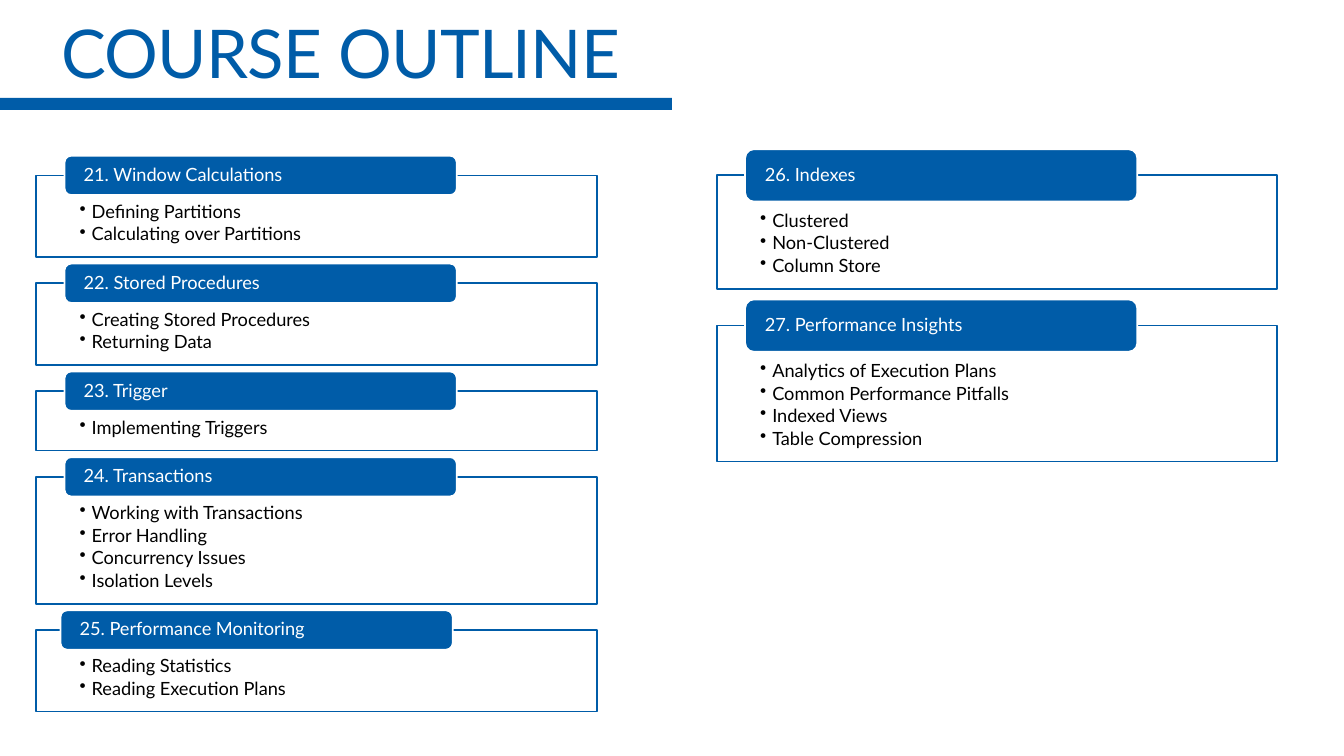
from lxml import etree
from pptx import Presentation
from pptx.dml.color import RGBColor
from pptx.enum.shapes import MSO_SHAPE as SHAPE
from pptx.enum.text import MSO_ANCHOR as ANCHOR, PP_ALIGN as ALIGN
from pptx.oxml.ns import qn
from pptx.util import Inches, Pt

TITLE = "COURSE OUTLINE"
COLUMNS = [
    {"left": 0.36, "tab_h": 0.39, "pad": 0.36, "gap": 0.26, "inset": 0.27, "topics": [
        ("21. Window Calculations", ["Defining Partitions", "Calculating over Partitions"], 0.28),
        ("22. Stored Procedures", ["Creating Stored Procedures", "Returning Data"], 0.28),
        ("23. Trigger", ["Implementing Triggers"], 0.28),
        ("24. Transactions", ["Working with Transactions", "Error Handling",
                              "Concurrency Issues", "Isolation Levels"], 0.28),
        ("25. Performance Monitoring", ["Reading Statistics", "Reading Execution Plans"], 0.24),
    ]},
    {"left": 7.11, "tab_h": 0.52, "pad": 0.45, "gap": 0.36, "inset": 0.36, "topics": [
        ("26. Indexes", ["Clustered", "Non-Clustered", "Column Store"], 0.28),
        ("27. Performance Insights", ["Analytics of Execution Plans", "Common Performance Pitfalls",
                                      "Indexed Views", "Table Compression"], 0.28),
    ]},
]
COLORS = {"blue": "005CA8", "white": "FFFFFF", "black": "000000"}
FONT = "Lato"
WIDTH, HEIGHT = 13.33, 7.5
TOP, BOX_W, TAB_W, LINE_H = 1.74, 5.56, 3.89, 0.23

prs = Presentation()
prs.slide_width, prs.slide_height = Inches(WIDTH), Inches(HEIGHT)
s = prs.slides.add_slide(prs.slide_layouts[6])


def rgb(name):
    return RGBColor.from_string(COLORS[name])


def add_box(kind, place, fill, line=None):
    sp = s.shapes.add_shape(kind, *map(Inches, place))
    sp.shadow.inherit = False
    sp.fill.solid()
    sp.fill.fore_color.rgb = rgb(fill)
    if line:
        sp.line.color.rgb = rgb(line)
        sp.line.width = Pt(1.25)
    else:
        sp.line.fill.background()
    return sp


def set_frame(tf, anchor, margins):
    tf.word_wrap = True
    tf.vertical_anchor = anchor
    for side, size in zip(("left", "top", "right", "bottom"), margins):
        setattr(tf, f"margin_{side}", Inches(size))


def write(tf, lines, size, color, after, bullet=False):
    for i, text in enumerate(lines):
        p = tf.add_paragraph() if i else tf.paragraphs[0]
        for key, value in {"alignment": ALIGN.LEFT, "line_spacing": 0.9,
                           "space_before": Pt(0), "space_after": Pt(after)}.items():
            setattr(p, key, value)
        if bullet:
            p.level = 1
            pPr = p._p.get_or_add_pPr()
            pPr.set("marL", str(Inches(0.12)))
            pPr.set("indent", str(Inches(-0.12)))
            etree.SubElement(pPr, qn("a:buChar")).set("char", "•")
        r = p.add_run()
        r.text = text
        for key, value in {"name": FONT, "size": Pt(size)}.items():
            setattr(r.font, key, value)
        r.font.color.rgb = rgb(color)


add_box(SHAPE.RECTANGLE, (0, 0.97, WIDTH / 2, 0.12), "blue")
title = s.shapes.add_textbox(*map(Inches, (0.36, 0, 10.91, 0.97))).text_frame
set_frame(title, ANCHOR.BOTTOM, (0.25, 0.05, 0.1, 0.05))
write(title, [TITLE], 48, "blue", 2)
title.paragraphs[0].runs[0].font._element.set("spc", "-50")

for col in COLUMNS:
    y = TOP
    for heading, items, shift in col["topics"]:
        height = col["pad"] + LINE_H * len(items) - 0.01 * (len(items) // 2)
        box = add_box(SHAPE.RECTANGLE, (col["left"], y, BOX_W, height), "white", "blue")
        clr = box.fill._xPr.find(qn("a:solidFill"))[0]
        etree.SubElement(clr, qn("a:alpha")).set("val", "90000")
        set_frame(box.text_frame, ANCHOR.TOP, (0.43, col["inset"], 0.43, 0.1))
        write(box.text_frame, items, 13, "black", 2, bullet=True)

        tab = add_box(SHAPE.ROUNDED_RECTANGLE,
                      (col["left"] + shift, y - col["tab_h"] / 2, TAB_W, col["tab_h"]),
                      "blue", "white")
        set_frame(tab.text_frame, ANCHOR.MIDDLE, (0.17, 0, 0.17, 0))
        write(tab.text_frame, [heading], 13, "white", 4.5)
        y += height + col["gap"]

prs.save("out.pptx")
